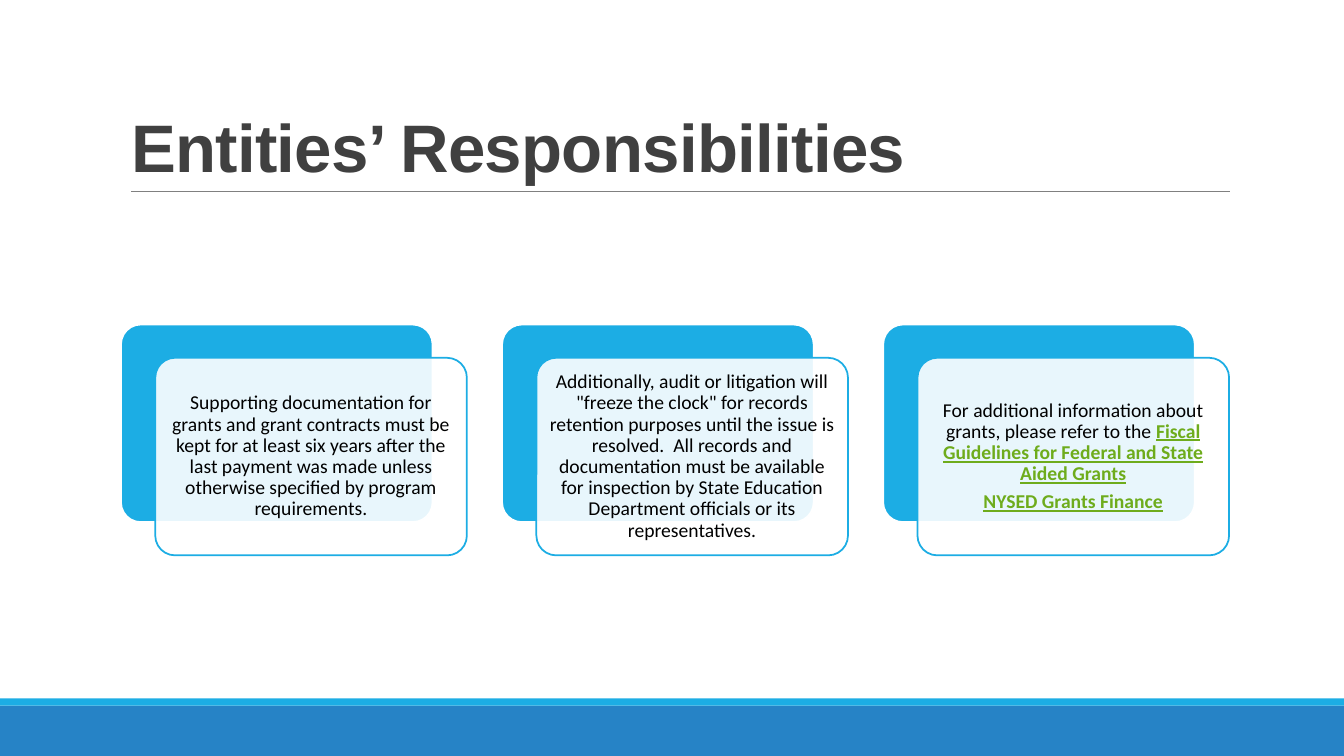
"""Builds the slide on the responsibilities of entities."""
import dataclasses

import pptx
import pptx.dml.color
import pptx.enum.shapes
import pptx.enum.text
import pptx.oxml
import pptx.oxml.ns
import pptx.util
from pptx.util import Inches

SHAPE = pptx.enum.shapes.MSO_SHAPE
ALIGN = pptx.enum.text.PP_ALIGN
ANCHOR = pptx.enum.text.MSO_ANCHOR


@dataclasses.dataclass(frozen=True)
class Theme:
    """Colours, fonts and sizes of the slide."""
    accent: str = "1CADE4"
    base: str = "2683C6"
    paper: str = "FFFFFF"
    rule: str = "808080"
    heading: str = "404040"
    ink: str = "000000"
    link: str = "6EAC1C"
    heading_font: str = "Arial"
    body_font: str = "Calibri"
    heading_size: int = 48
    body_size: int = 14


THEME = Theme()
CARD_LEFT, CARD_TOP, CARD_PITCH = 1.2, 3.22, 3.78
CARD_WIDTH, CARD_HEIGHT = 3.09, 1.96
FRONT_SHIFT_X, FRONT_SHIFT_Y = 0.34, 0.33
TEXT_MARGIN = 0.06

CARDS = [
    [[("Supporting documentation for grants and grant contracts must be kept for at "
       "least six years after the last payment was made unless otherwise specified "
       "by program requirements.", False)]],
    [[("Additionally, audit or litigation will \"freeze the clock\" for records "
       "retention purposes until the issue is resolved.\u00a0 All records and "
       "documentation must be available for inspection by State Education "
       "Department officials or its representatives.", False)]],
    [[("For additional information about grants, please refer to the ", False),
      ("Fiscal Guidelines for Federal and State Aided Grants", True)],
     [("NYSED Grants Finance", True)]],
]


def color(value):
    """Turn a hex string into a colour."""
    return pptx.dml.color.RGBColor.from_string(value)


def add_panel(shapes, kind, left, top, width, height, fill, line=None):
    """Add a filled shape with an optional outline."""
    panel = shapes.add_shape(kind, Inches(left), Inches(top), Inches(width), Inches(height))
    panel.shadow.inherit = False
    panel.fill.solid()
    panel.fill.fore_color.rgb = color(fill)
    if line:
        panel.line.color.rgb = color(line)
        panel.line.width = pptx.util.Pt(1.25)
    else:
        panel.line.fill.background()
    return panel


def set_opacity(panel, percent):
    """Make a solid fill partly transparent."""
    fill = panel.fill._xPr.find(pptx.oxml.ns.qn("a:solidFill"))
    alpha = pptx.oxml.parse_xml(
        f'<a:alpha {pptx.oxml.ns.nsdecls("a")} val="{percent * 1000}"/>')
    fill[0].append(alpha)


def add_rule(page):
    """Draw the thin rule under the title."""
    rule = page.shapes.add_connector(
        pptx.enum.shapes.MSO_CONNECTOR.STRAIGHT,
        Inches(1.3), Inches(1.9), Inches(12.2), Inches(1.9))
    rule.line.color.rgb = color(THEME.rule)
    rule.line.width = pptx.util.Pt(0.5)
    rule._element.spPr.append(
        pptx.oxml.parse_xml(f'<a:effectLst {pptx.oxml.ns.nsdecls("a")}/>'))


def set_title(page, text):
    """Place and format the title placeholder."""
    title = page.shapes.title
    title.left, title.top = Inches(1.2), Inches(0.31)
    title.width, title.height = Inches(11), Inches(1.59)
    frame = title.text_frame
    frame.auto_size = pptx.enum.text.MSO_AUTO_SIZE.NONE
    frame.vertical_anchor = ANCHOR.BOTTOM
    para = frame.paragraphs[0]
    para.alignment = ALIGN.LEFT
    para.line_spacing = 0.85
    span = para.add_run()
    span.text = text
    para.font.name = THEME.heading_font
    para.font.size = pptx.util.Pt(THEME.heading_size)
    para.font.bold = True
    para.font.color.rgb = color(THEME.heading)
    span._r.get_or_add_rPr().set("spc", "-50")


def add_text(shapes, left, top, width, height, paragraphs):
    """Add centred body text whose links are bold and underlined."""
    box = shapes.add_textbox(Inches(left), Inches(top), Inches(width), Inches(height))
    frame = box.text_frame
    frame.word_wrap = True
    frame.vertical_anchor = ANCHOR.MIDDLE
    frame.margin_left = frame.margin_right = Inches(TEXT_MARGIN)
    frame.margin_top = frame.margin_bottom = Inches(TEXT_MARGIN)
    for index, spans in enumerate(paragraphs):
        para = frame.add_paragraph() if index else frame.paragraphs[0]
        para.alignment = ALIGN.CENTER
        para.line_spacing = 0.9
        para.space_after = pptx.util.Pt(5)
        para.font.name = THEME.body_font
        para.font.size = pptx.util.Pt(THEME.body_size)
        for text, is_link in spans:
            span = para.add_run()
            span.text = text
            span.font.bold = span.font.underline = is_link
            span.font.color.rgb = color(THEME.link if is_link else THEME.ink)


def add_card(shapes, left, paragraphs):
    """Add a coloured back card, a translucent front card and its text."""
    front_left, front_top = left + FRONT_SHIFT_X, CARD_TOP + FRONT_SHIFT_Y
    back = add_panel(shapes, SHAPE.ROUNDED_RECTANGLE, left, CARD_TOP,
                     CARD_WIDTH, CARD_HEIGHT, THEME.accent, THEME.paper)
    front = add_panel(shapes, SHAPE.ROUNDED_RECTANGLE, front_left, front_top,
                      CARD_WIDTH, CARD_HEIGHT, THEME.paper, THEME.accent)
    back.adjustments[0] = front.adjustments[0] = 0.1
    set_opacity(front, 90)
    add_text(shapes, front_left + TEXT_MARGIN, front_top + TEXT_MARGIN,
             CARD_WIDTH - 2 * TEXT_MARGIN, CARD_HEIGHT - 2 * TEXT_MARGIN, paragraphs)


def main():
    """Build and save the deck."""
    deck = pptx.Presentation()
    deck.slide_width, deck.slide_height = Inches(13.33), Inches(7.5)
    page = deck.slides.add_slide(deck.slide_layouts.get_by_name("Title Only"))
    add_panel(page.shapes, SHAPE.RECTANGLE, 0, 7, 13.33, 0.5, THEME.base)
    add_panel(page.shapes, SHAPE.RECTANGLE, 0, 6.93, 13.33, 0.07, THEME.accent)
    add_rule(page)
    set_title(page, "Entities’ Responsibilities")
    cards = page.shapes.add_group_shape()
    for index, paragraphs in enumerate(CARDS):
        add_card(cards.shapes, CARD_LEFT + index * CARD_PITCH, paragraphs)
    deck.save("out.pptx")


if __name__ == "__main__":
    main()
